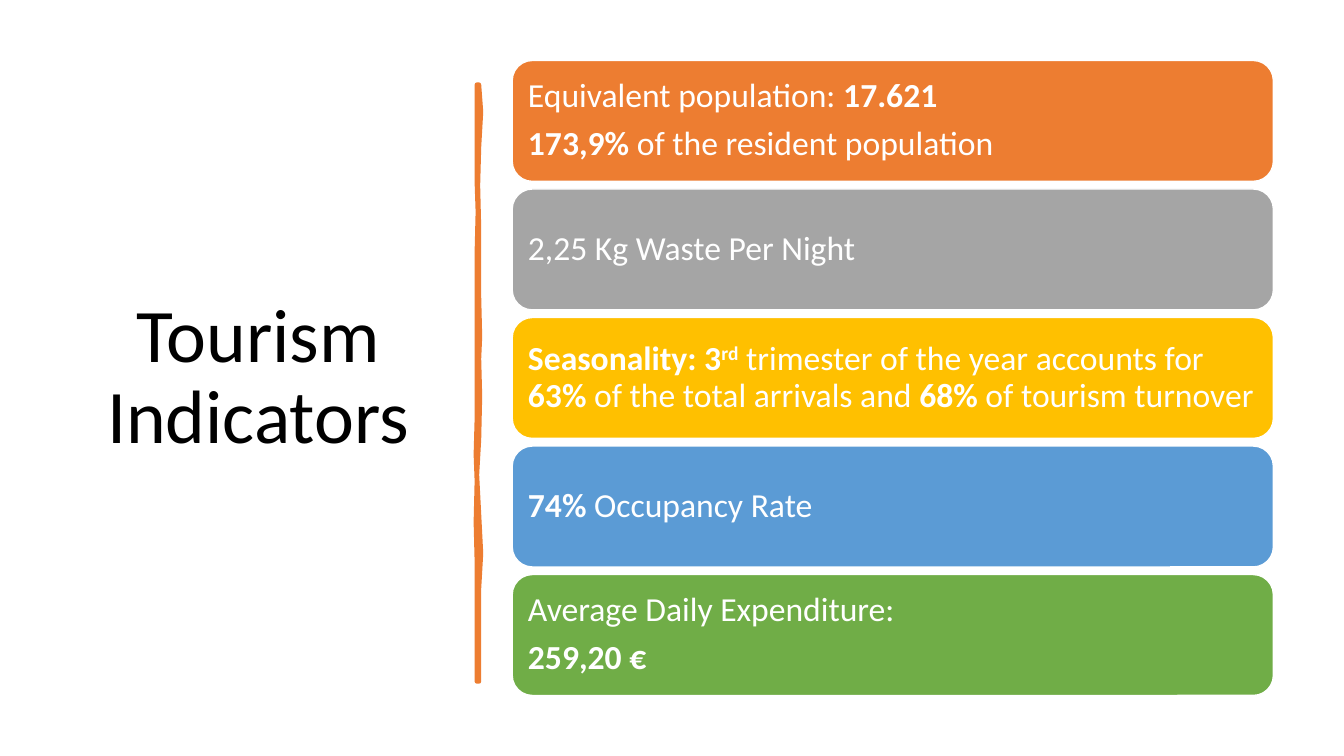
from pptx import Presentation
from pptx.dml.color import RGBColor
from pptx.enum.shapes import MSO_SHAPE as Shape
from pptx.enum.text import MSO_ANCHOR as Anchor, MSO_AUTO_SIZE as AutoSize, PP_ALIGN as Align
from pptx.util import Inches, Pt

BLACK = RGBColor(0x00, 0x00, 0x00)
WHITE = RGBColor(0xFF, 0xFF, 0xFF)
ORANGE = RGBColor(0xED, 0x7D, 0x31)
GRAY = RGBColor(0xA5, 0xA5, 0xA5)
GOLD = RGBColor(0xFF, 0xC0, 0x00)
BLUE = RGBColor(0x5B, 0x9B, 0xD5)
GREEN = RGBColor(0x70, 0xAD, 0x47)
FONT = "Calibri"

# Each indicator: fill and paragraphs, made of (text, style) runs
INDICATORS = [
    (ORANGE, [[("Equivalent population: ", ""), ("17.621", "bold")],
              [("173,9% ", "bold"), ("of the resident population", "")]]),
    (GRAY, [[("2,25 Kg Waste Per Night", "")]]),
    (GOLD, [[("Seasonality: 3", "bold"), ("rd", "bold super"),
             (" trimester of the year accounts for ", ""), ("63%", "bold"),
             (" of the total arrivals and ", ""), ("68%", "bold"),
             (" of tourism turnover", "")]]),
    (BLUE, [[("74%", "bold"), (" Occupancy Rate", "")]]),
    (GREEN, [[("Average Daily Expenditure:", "")], [("259,20 €", "bold")]]),
]

# Hand-drawn divider: outline points in inches
DIVIDER = [
    # Right edge, downwards
    (4.75, 0.84), (4.77, 1.11), (4.75, 1.46), (4.74, 1.84), (4.75, 2.26),
    (4.75, 2.94), (4.76, 3.34), (4.75, 3.56), (4.76, 3.93), (4.75, 4.36),
    (4.73, 4.71), (4.75, 5.1), (4.77, 5.49), (4.75, 5.84), (4.75, 6.76),
    # Left edge, upwards
    (4.73, 6.76), (4.73, 6.13), (4.73, 5.57), (4.72, 5.18), (4.73, 4.77),
    (4.72, 4.51), (4.73, 4.15), (4.73, 3.35), (4.73, 2.5), (4.74, 2.1),
    (4.73, 1.81), (4.73, 0.84),
]


def add_run(paragraph, text, size, color, bold=False, superscript=False):
    run = paragraph.add_run()
    run.text = text
    run.font.name = FONT
    run.font.size = Pt(size)
    run.font.bold = bold
    run.font.color.rgb = color
    if superscript:
        run._r.get_or_add_rPr().set("baseline", "30000")


def write_text(frame, paragraphs, size, color, align=Align.LEFT, gap=0):
    frame.word_wrap = True
    frame.auto_size = AutoSize.NONE
    frame.vertical_anchor = Anchor.MIDDLE
    for index, runs in enumerate(paragraphs):
        paragraph = frame.add_paragraph() if index else frame.paragraphs[0]
        paragraph.alignment = align
        paragraph.line_spacing = 0.9
        paragraph.space_before = Pt(gap if index else 0)
        for text, style in runs:
            add_run(paragraph, text, size, color, "bold" in style, "super" in style)


def paint(shape, fill, line, width):
    shape.shadow.inherit = False
    shape.fill.solid()
    shape.fill.fore_color.rgb = fill
    shape.line.color.rgb = line
    shape.line.width = Pt(width)


def add_divider(slide):
    start, *outline = [(Inches(x), Inches(y)) for x, y in DIVIDER]
    builder = slide.shapes.build_freeform(*start)
    builder.add_line_segments(outline, close=True)
    paint(builder.convert_to_shape(), ORANGE, ORANGE, 3.25)


def add_indicator(slide, top, fill, paragraphs):
    card = slide.shapes.add_shape(Shape.ROUNDED_RECTANGLE, Inches(5.08), Inches(top),
                                  Inches(7.55), Inches(1.2))
    paint(card, fill, WHITE, 1)
    frame = card.text_frame
    # The rounded corners already inset the text by 0.06 inch
    frame.margin_left = frame.margin_right = Inches(0.1)
    frame.margin_top = frame.margin_bottom = Inches(0.1)
    write_text(frame, paragraphs, 24, WHITE, gap=8.4)


def add_title(slide, text):
    title = slide.shapes.title
    title.left, title.top = Inches(0.69), Inches(0.7)
    title.width, title.height = Inches(3.74), Inches(6.11)
    write_text(title.text_frame, [[(text, "")]], 54, BLACK, align=Align.CENTER)


def main():
    deck = Presentation()
    deck.slide_width, deck.slide_height = Inches(13.33), Inches(7.5)
    slide = deck.slides.add_slide(deck.slide_layouts[5])

    add_title(slide, "Tourism Indicators")
    add_divider(slide)

    # Stack of indicator cards
    for row, (fill, paragraphs) in enumerate(INDICATORS):
        add_indicator(slide, 0.6 + row * 1.275, fill, paragraphs)

    deck.save("out.pptx")


if __name__ == "__main__":
    main()
